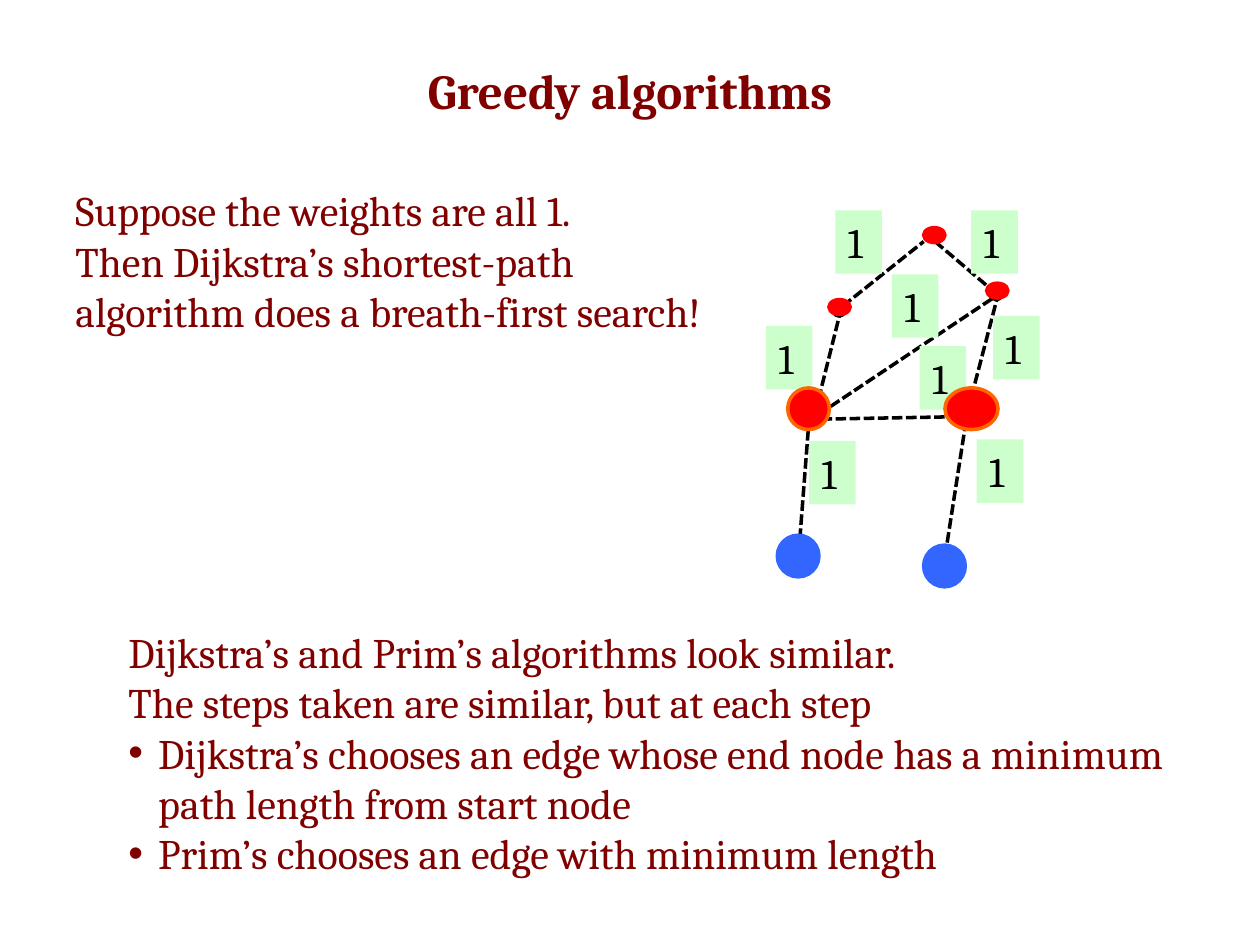
from lxml import etree
from pptx import Presentation
from pptx.dml.color import RGBColor
from pptx.enum.dml import MSO_LINE
from pptx.enum.shapes import MSO_CONNECTOR, MSO_SHAPE
from pptx.enum.text import MSO_ANCHOR as Anchor, MSO_AUTO_SIZE as AutoSize, PP_ALIGN as Align
from pptx.oxml.ns import qn
from pptx.util import Cm, Pt

MAROON, BLACK, RED, ORANGE = "800000", "000000", "FF0000", "FF6600"
BLUE, MINT = "3366FF", "CCFFCC"
BODY = {"name": "Cambria", "size": Pt(24)}
HEADING = {"name": "Cambria", "size": Pt(28), "bold": True}

# Weighted graph, in cm from the corner of its box
EDGES = [
    (1.19, 4.27, 1.68, 2.31), (4.27, 4.22, 4.88, 1.88),
    (3.61, 0.81, 4.75, 1.78), (1.75, 2.11, 3.38, 0.81),
    (1.27, 4.29, 4.88, 1.88), (1.32, 4.39, 4.14, 4.34),
    (3.81, 7.16, 4.24, 4.39), (0.84, 7.37, 1.07, 4.39),
]
WEIGHTS = [
    (1.6, 0.18), (3.3, 2.92), (4.34, 0.18), (4.78, 2.31),
    (0.2, 2.51), (2.74, 1.47), (4.45, 4.8), (1.07, 4.83),
]
# Kind of node: fill, outline, height, then left, top and width of each
NODES = [
    (BLACK, BLACK, 0.25, [(1.55, 2.06, 0.25), (4.72, 1.73, 0.25)]),
    (RED, RED, 0.3, [(3.38, 0.53, 0.43), (1.47, 1.98, 0.43), (4.65, 1.65, 0.43)]),
    (RED, ORANGE, 0.84, [(0.64, 3.76, 0.84), (3.81, 3.76, 1.07)]),
    (BLUE, BLUE, 0.84, [(0.43, 6.73, 0.84), (3.38, 6.93, 0.84)]),
]


def color(value):
    return RGBColor.from_string(value)


def set_values(target, values):
    for name, value in values.items():
        setattr(target, name, value)


def write(para, text, font, tint):
    span = para.add_run()
    span.text = text
    set_values(span.font, font)
    span.font.color.rgb = color(tint)


def add_bullet(para, indent):
    props = para._p.get_or_add_pPr()
    props.set("marL", str(Cm(indent)))
    props.set("indent", str(-Cm(indent)))
    etree.SubElement(props, qn("a:buFont")).set("typeface", "Arial")
    etree.SubElement(props, qn("a:buChar")).set("char", "•")


def add_shape(page, kind, box, fill, outline=None):
    shape = page.shapes.add_shape(kind, *map(Cm, box))
    shape.shadow.inherit = False
    shape.fill.solid()
    shape.fill.fore_color.rgb = color(fill)
    if outline:
        shape.line.color.rgb = color(outline)
        shape.line.width = Pt(2)
    else:
        shape.line.fill.background()
    return shape


def add_edge(page, ends):
    edge = page.shapes.add_connector(MSO_CONNECTOR.STRAIGHT, *map(Cm, ends))
    set_values(edge.line, {"width": Pt(2), "dash_style": MSO_LINE.SQUARE_DOT})
    edge.line.color.rgb = color(BLACK)
    etree.SubElement(edge._element.spPr, qn("a:effectLst"))


def add_title(page, box, text):
    frame = page.shapes.add_textbox(*map(Cm, box)).text_frame
    set_values(frame, {"word_wrap": True, "vertical_anchor": Anchor.MIDDLE})
    para = frame.paragraphs[0]
    para.alignment = Align.CENTER
    write(para, text, HEADING, MAROON)


def add_body(page, box, lines, bullets=()):
    frame = page.shapes.add_textbox(*map(Cm, box)).text_frame
    set_values(frame, {"word_wrap": True, "auto_size": AutoSize.SHAPE_TO_FIT_TEXT})
    for index, text in enumerate([*lines, *bullets]):
        para = frame.add_paragraph() if index else frame.paragraphs[0]
        if index >= len(lines):
            add_bullet(para, 0.6)
        write(para, text, BODY, MAROON)


def add_graph(page, left, top):
    # Edges
    for x1, y1, x2, y2 in EDGES:
        add_edge(page, (left + x1, top + y1, left + x2, top + y2))
    # Weight labels
    for x, y in WEIGHTS:
        label = add_shape(page, MSO_SHAPE.RECTANGLE, (left + x, top + y, 0.94, 1.28), MINT)
        frame = label.text_frame
        set_values(frame, {"word_wrap": False, "auto_size": AutoSize.SHAPE_TO_FIT_TEXT,
                           "vertical_anchor": Anchor.TOP})
        frame.paragraphs[0].alignment = Align.LEFT
        write(frame.paragraphs[0], "1", BODY, BLACK)
    # Nodes
    for fill, outline, height, places in NODES:
        for x, y, width in places:
            add_shape(page, MSO_SHAPE.OVAL, (left + x, top + y, width, height), fill, outline)


def main():
    deck = Presentation()
    set_values(deck, {"slide_width": Cm(25.4), "slide_height": Cm(19.05)})
    page = deck.slides.add_slide(deck.slide_layouts[6])

    add_title(page, (1.9, 1.07, 21.6, 1.47), "Greedy algorithms")
    add_body(page, (1.27, 3.6, 23.3, 3.33), [
        "Suppose the weights are all 1.",
        "Then Dijkstra’s shortest-path",
        "algorithm does a breath-first search!",
    ])
    add_graph(page, 15.24, 4.06)
    add_body(page, (2.34, 12.5, 21.4, 5.38), [
        "Dijkstra’s and Prim’s algorithms look similar.",
        "The steps taken are similar, but at each step",
    ], bullets=[
        "Dijkstra’s chooses an edge whose end node has a minimum path length from start node",
        "Prim’s chooses an edge with minimum length",
    ])
    deck.save("out.pptx")


if __name__ == "__main__":
    main()
